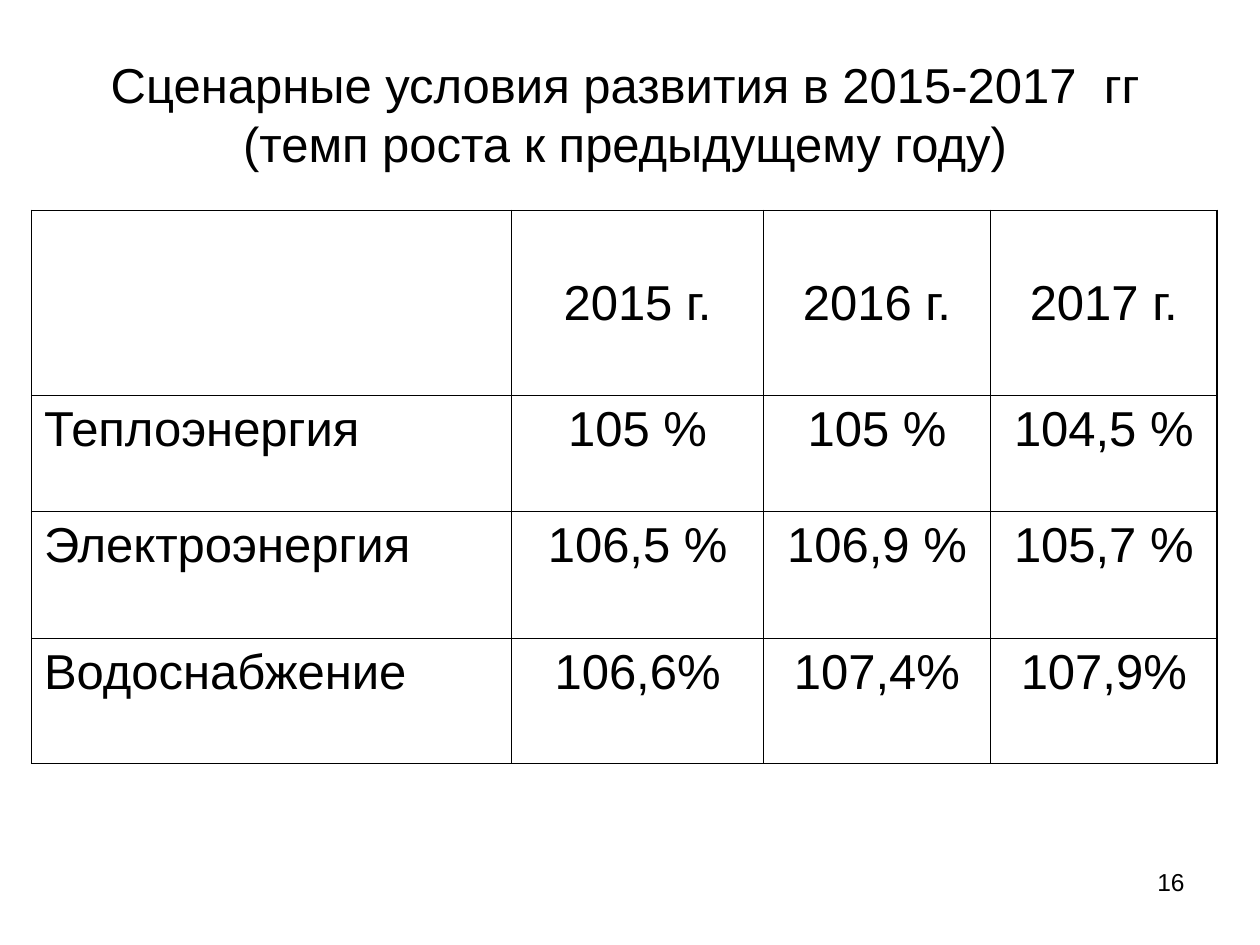
from dataclasses import dataclass

from lxml import etree
from pptx import Presentation
from pptx.dml.color import RGBColor
from pptx.enum.text import MSO_ANCHOR, PP_ALIGN
from pptx.oxml.ns import qn
from pptx.slide import Slide
from pptx.table import _Cell
from pptx.text.text import TextFrame
from pptx.util import Inches, Pt

LEFT, CENTER, RIGHT = PP_ALIGN.LEFT, PP_ALIGN.CENTER, PP_ALIGN.RIGHT
TOP, MIDDLE = MSO_ANCHOR.TOP, MSO_ANCHOR.MIDDLE
COLORS = {"background": "FFFFFF", "text": "000000", "border": "000000"}
FONT = "Arial"
SLIDE_WIDTH, SLIDE_HEIGHT = 10, 7.5
BORDER_POINTS = 1
TABLE_LEFT, TABLE_TOP = 0.25, 1.67
COLUMN_WIDTHS = (3.81, 2, 1.8, 1.8)
ROW_HEIGHTS = (1.47, 0.92, 1.01, 0.99)
TABLE_ROWS = (
    ("", "2015 г.", "2016 г.", "2017 г."),
    ("Теплоэнергия", "105 %", "105 %", "104,5 %"),
    ("Электроэнергия", "106,5 %", "106,9 %", "105,7 %"),
    ("Водоснабжение", "106,6%", "107,4%", "107,9%"),
)


@dataclass(frozen=True)
class Label:
    text: str
    left: float
    top: float
    width: float
    height: float
    size: int
    align: PP_ALIGN
    anchor: MSO_ANCHOR = TOP
    bottom_margin: float = 0.05


LABELS = (
    Label("Сценарные условия развития в 2015-2017  гг (темп роста к предыдущему году)",
          0.5, 0.3, 8.92, 1.62, 28, CENTER, MIDDLE, 0.47),
    Label("16", 7.17, 6.83, 2.33, 0.52, 14, RIGHT),
)


def write_text(frame: TextFrame, text: str, *, size: int, align: PP_ALIGN) -> None:
    paragraph = frame.paragraphs[0]
    paragraph.alignment = align
    paragraph.font.size = Pt(size)
    if text:
        run = paragraph.add_run()
        run.text = text
        run.font.name = FONT
        run.font.size = Pt(size)
        run.font.color.rgb = RGBColor.from_string(COLORS["text"])


def draw_label(slide: Slide, label: Label) -> None:
    shape = slide.shapes.add_textbox(
        Inches(label.left), Inches(label.top), Inches(label.width), Inches(label.height))
    frame = shape.text_frame
    frame.word_wrap = True
    frame.vertical_anchor = label.anchor
    frame.margin_bottom = Inches(label.bottom_margin)
    write_text(frame, label.text, size=label.size, align=label.align)


def draw_borders(cell: _Cell) -> None:
    properties = cell._tc.get_or_add_tcPr()
    for position, side in enumerate(("a:lnL", "a:lnR", "a:lnT", "a:lnB")):
        line = etree.Element(qn(side), w=str(Pt(BORDER_POINTS)))
        fill = etree.SubElement(line, qn("a:solidFill"))
        etree.SubElement(fill, qn("a:srgbClr"), val=COLORS["border"])
        properties.insert(position, line)


def draw_table(slide: Slide) -> None:
    shape = slide.shapes.add_table(
        len(ROW_HEIGHTS), len(COLUMN_WIDTHS), Inches(TABLE_LEFT), Inches(TABLE_TOP),
        Inches(sum(COLUMN_WIDTHS)), Inches(sum(ROW_HEIGHTS)))
    table = shape.table
    table.first_row = False
    table.horz_banding = False
    for column, width in zip(table.columns, COLUMN_WIDTHS):
        column.width = Inches(width)
    for row_index, (height, values) in enumerate(zip(ROW_HEIGHTS, TABLE_ROWS)):
        table.rows[row_index].height = Inches(height)
        for column_index, value in enumerate(values):
            cell = table.cell(row_index, column_index)
            cell.fill.background()
            cell.vertical_anchor = TOP if row_index else MIDDLE
            write_text(cell.text_frame, value, size=28,
                       align=CENTER if column_index else LEFT)
            draw_borders(cell)


def main() -> None:
    presentation = Presentation()
    presentation.slide_width = Inches(SLIDE_WIDTH)
    presentation.slide_height = Inches(SLIDE_HEIGHT)
    slide = presentation.slides.add_slide(presentation.slide_layouts[6])
    background = slide.background.fill
    background.solid()
    background.fore_color.rgb = RGBColor.from_string(COLORS["background"])
    for label in LABELS:
        draw_label(slide, label)
    draw_table(slide)
    presentation.save("out.pptx")


if __name__ == "__main__":
    main()
